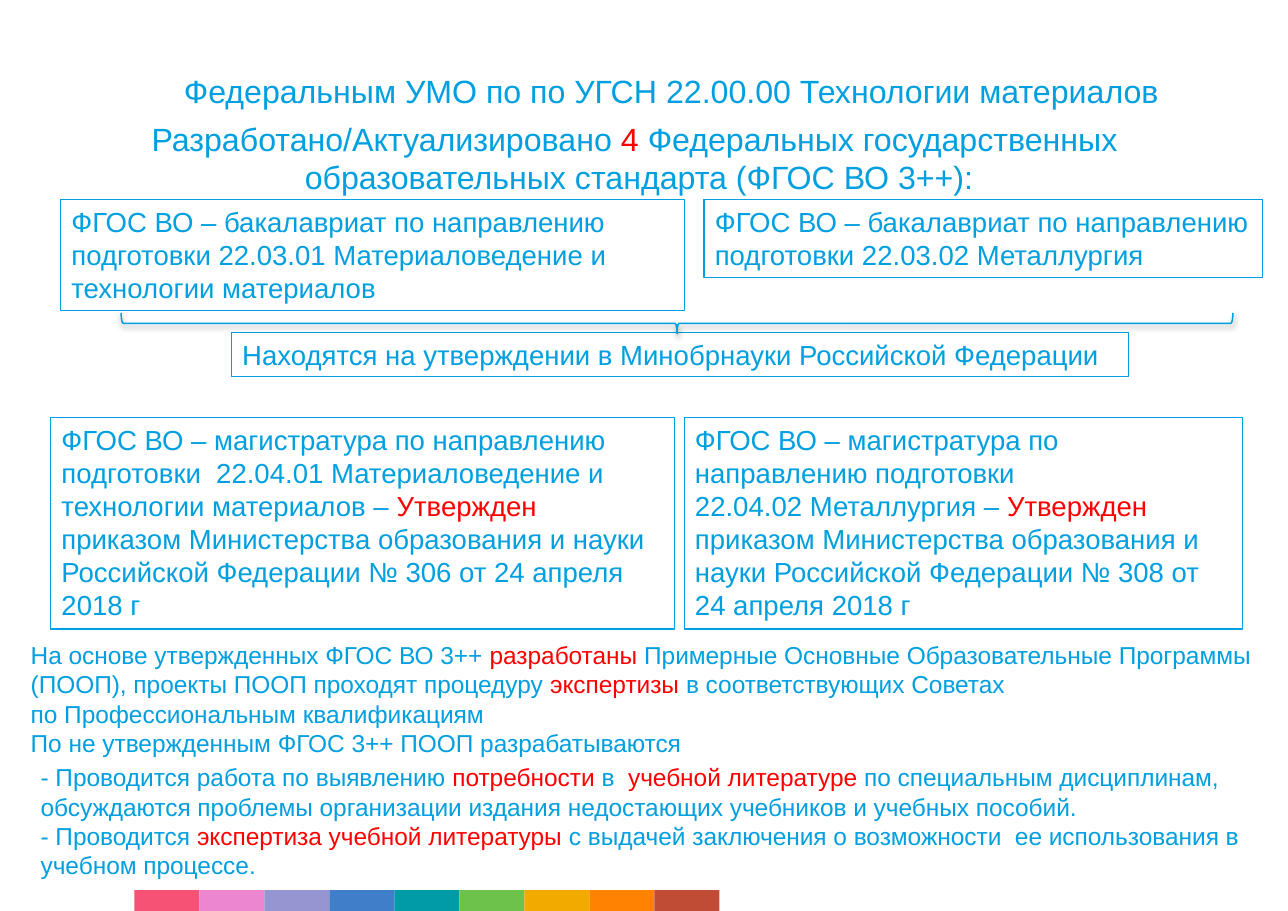
from lxml.etree import SubElement
from pptx import Presentation
from pptx.dml.color import RGBColor as RGB
from pptx.enum.shapes import MSO_SHAPE as Shape
from pptx.enum.text import MSO_AUTO_SIZE as Fit, PP_ALIGN as Align
from pptx.oxml.ns import qn
from pptx.util import Inches, Pt

BLUE = RGB(0x00, 0x9F, 0xDF)
RED = RGB(0xFF, 0x00, 0x00)
STRIPE = [RGB.from_string(code) for code in (
    "F65275", "EC86D0", "9595D2", "407EC9", "009CA6",
    "6CC24A", "F2A900", "FF8200", "C04C36")]


def add_text(slide, box, lines, size, align=Align.LEFT):
    """Add a text box whose parts between asterisks are red."""
    item = slide.shapes.add_textbox(*map(Inches, box))
    frame = item.text_frame
    frame.word_wrap = True
    frame.auto_size = Fit.SHAPE_TO_FIT_TEXT
    frame.text = "\n".join(line.replace("*", "") for line in lines)
    for para, line in zip(frame.paragraphs, lines):
        para.text = ""
        para.alignment = align
        for index, part in enumerate(line.split("*")):
            if part:
                run = para.add_run()
                run.text = part
                run.font.name = "Arial"
                run.font.size = Pt(size)
                run.font.color.rgb = RED if index % 2 else BLUE
    return item


def add_card(slide, box, lines):
    """Add a text box with a thin blue frame."""
    card = add_text(slide, box, lines, 18)
    card.line.color.rgb = BLUE
    card.line.width = Pt(0.75)


def add_brace(slide, box):
    """Add a brace that fills the box and points down, with a soft shadow."""
    left, top, width, height = box
    brace = slide.shapes.add_shape(
        Shape.LEFT_BRACE,
        Inches(left + (width - height) / 2), Inches(top - (width - height) / 2),
        Inches(height), Inches(width))
    brace.rotation = 270
    brace.adjustments[0] = 0.095
    brace.fill.background()
    brace.line.color.rgb = BLUE
    brace.line.width = Pt(1)
    brace.shadow.inherit = False
    effects = brace._element.spPr.find(qn("a:effectLst"))
    shade = SubElement(effects, qn("a:outerShdw"), blurRad=str(Pt(3.1)),
                       dist=str(Pt(1.6)), dir="5400000", rotWithShape="0")
    tint = SubElement(shade, qn("a:srgbClr"), val="000000")
    SubElement(tint, qn("a:alpha"), val="38000")


def add_stripe(slide, box):
    """Fill the box with equal colour blocks."""
    left, top, width, height = box
    step = width / len(STRIPE)
    for index, color in enumerate(STRIPE):
        block = slide.shapes.add_shape(
            Shape.RECTANGLE, Inches(left + index * step), Inches(top),
            Inches(step), Inches(height))
        block.shadow.inherit = False
        block.fill.solid()
        block.fill.fore_color.rgb = color
        block.line.fill.background()


def add_head(slide, box):
    """Add the two centred headings."""
    left, top, width, height = box
    add_text(slide, (left + 0.73, top, width - 0.87, 0.45), [
        "Федеральным УМО по по УГСН 22.00.00 Технологии материалов",
    ], 21, Align.CENTER)
    add_text(slide, (left, top + 0.43, width, height - 0.43), [
        "Разработано/Актуализировано *4 *Федеральных государственных ",
        "образовательных стандарта (ФГОС ВО 3++):",
    ], 21, Align.CENTER)


def add_bachelor(slide, box):
    """Add the bachelor standards, joined by a brace to their status."""
    left, top, width, height = box
    add_card(slide, (left, top, 5.66, 1.01), [
        "ФГОС ВО – бакалавриат по направлению подготовки 22.03.01 "
        "Материаловедение и технологии материалов"])
    add_card(slide, (left + width - 5.07, top, 5.07, 0.71), [
        "ФГОС ВО – бакалавриат по направлению подготовки 22.03.02 "
        "Металлургия"])
    add_card(slide, (left + 1.55, top + height - 0.4, 8.14, 0.4), [
        "Находятся на утверждении в Минобрнауки Российской Федерации"])
    add_brace(slide, (left + 0.55, top + 1.03, 10.09, 0.19))


def add_master(slide, box):
    """Add the two approved master standards."""
    left, top, width, height = box
    order = (" приказом Министерства образования и науки Российской "
             "Федерации № {} от 24 апреля 2018 г")
    add_card(slide, (left, top, 5.66, height), [
        "ФГОС ВО – магистратура по направлению подготовки  22.04.01 "
        "Материаловедение и технологии материалов – *Утвержден*"
        + order.format(306)])
    add_card(slide, (left + width - 5.07, top, 5.07, height), [
        "ФГОС ВО – магистратура по направлению подготовки",
        "22.04.02 Металлургия – *Утвержден*" + order.format(308)])


def add_notes(slide, box):
    """Add the remarks on programmes and on textbooks."""
    left, top, width, height = box
    add_text(slide, (left, top, width, 1.18), [
        "На основе утвержденных ФГОС ВО 3++ *разработаны* Примерные Основные "
        "Образовательные Программы (ПООП), проекты ПООП проходят процедуру "
        "*экспертизы *в соответствующих Советах",
        "по Профессиональным квалификациям",
        "По не утвержденным ФГОС 3++ ПООП разрабатываются",
    ], 16)
    add_text(slide, (left + 0.09, top + height - 1.18, width - 0.09, 1.18), [
        "- Проводится работа по выявлению *потребности *в * учебной "
        "литературе *по специальным дисциплинам, обсуждаются проблемы "
        "организации издания недостающих учебников и учебных пособий.",
        "- Проводится *экспертиза учебной литературы *с выдачей заключения "
        "о возможности  ее использования в учебном процессе.",
    ], 16)


def main():
    """Build the slide and save it."""
    deck = Presentation()
    deck.slide_width = Inches(11.69)
    deck.slide_height = Inches(8.27)
    slide = deck.slides.add_slide(deck.slide_layouts[6])
    add_stripe(slide, (1.22, 8.08, 5.31, 0.2))
    add_head(slide, (0.18, 0.6, 11.24, 1.24))
    add_bachelor(slide, (0.55, 1.81, 10.91, 1.61))
    add_master(slide, (0.46, 3.79, 10.82, 1.92))
    add_notes(slide, (0.18, 5.76, 11.51, 2.29))
    deck.save("out.pptx")


if __name__ == "__main__":
    main()
